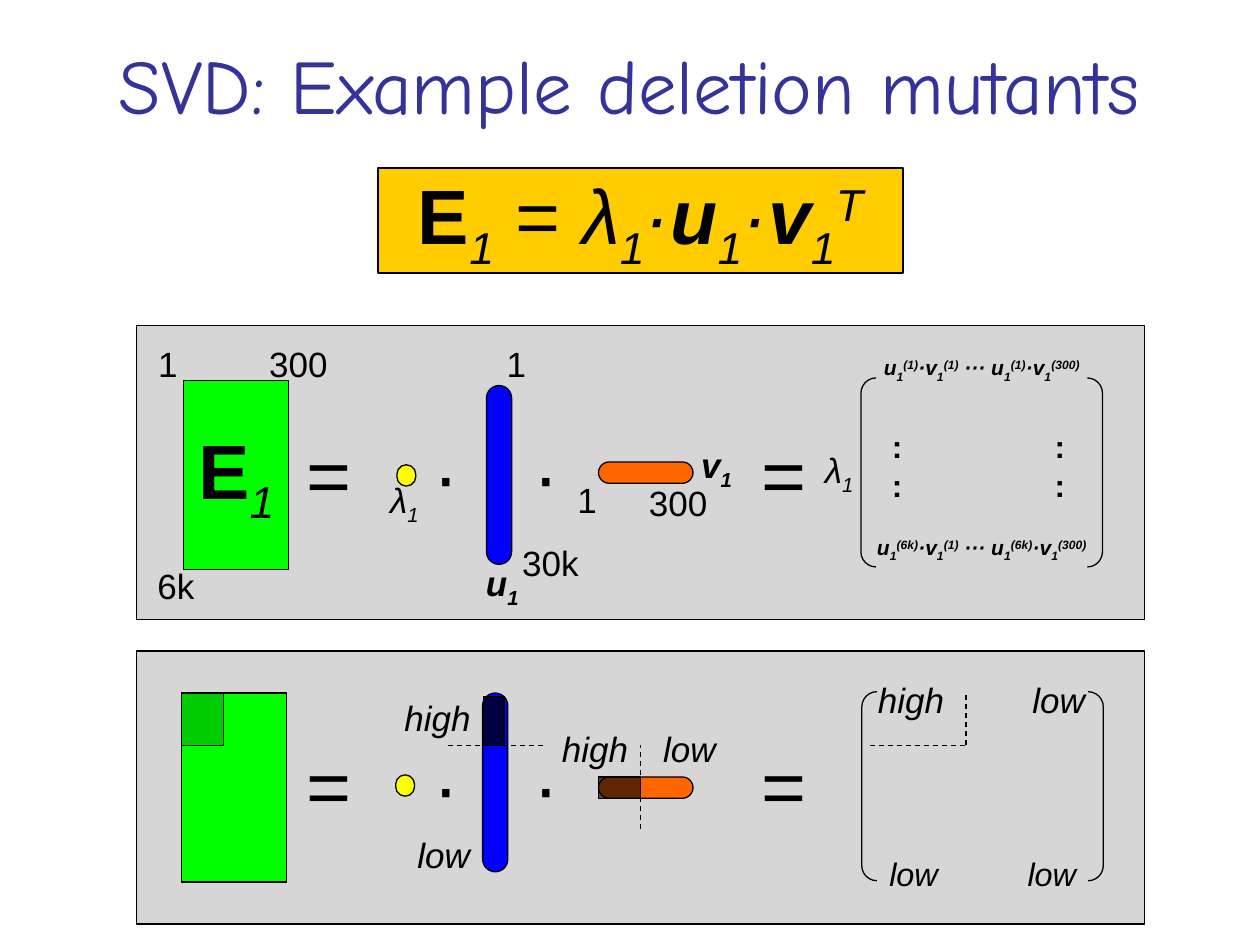
from lxml import etree
from pptx import Presentation, util as u
from pptx.dml.color import RGBColor
from pptx.enum import dml, shapes as sh, text as tx
from pptx.oxml.ns import qn

Pt = u.Pt
INK = {"black": "000000", "title": "333399", "gold": "FFCC00", "gray": "808080",
       "green": "00FF00", "blue": "0000FF", "orange": "FF6600", "yellow": "FFFF00"}
KIND = sh.MSO_SHAPE
BASE = {"_": "-25000", "^": "30000"}


def rgb(name):
    return RGBColor.from_string(INK[name])


class Pen:
    """Style and current slide."""
    face = "Arial"
    line = 0.75

    def __init__(self, slide):
        self.slide = slide

    def letter(self, shape, runs, size, ink="black", face=None):
        """Runs are (text, marks): b bold, i italic, _ below, ^ above."""
        frame = shape.text_frame
        form = {"word_wrap": False, "vertical_anchor": tx.MSO_ANCHOR.MIDDLE}
        for key, val in form.items():
            setattr(frame, key, val)
        para = frame.paragraphs[0]
        para.alignment = tx.PP_ALIGN.CENTER
        for word, marks in runs:
            run = para.add_run()
            run.text = word
            form = {"size": Pt(size), "name": face or self.face,
                    "bold": "b" in marks, "italic": "i" in marks}
            for key, val in form.items():
                setattr(run.font, key, val)
            run.font.color.rgb = rgb(ink)
            for mark in BASE:
                if mark in marks:
                    run.font._element.set("baseline", BASE[mark])

    def label(self, x, y, runs, size=20, wide=60, **form):
        """Text centred on x, y."""
        if isinstance(runs, str):
            runs = [(runs, "")]
        high = size * 1.2 + 8
        box = self.slide.shapes.add_textbox(
            Pt(x - wide / 2), Pt(y - high / 2), Pt(wide), Pt(high))
        self.letter(box, runs, size, **form)

    def shape(self, kind, at, fill=None, alpha=None, adj=None):
        item = self.slide.shapes.add_shape(kind, *map(Pt, at))
        item.shadow.inherit = False
        item.line.color.rgb = rgb("black")
        item.line.width = Pt(self.line)
        if adj is not None:
            item.adjustments[0] = adj
        if fill is None:
            item.fill.background()
        else:
            item.fill.solid()
            item.fill.fore_color.rgb = rgb(fill)
        if alpha:
            tone = item._element.spPr.find(qn("a:solidFill"))[0]
            etree.SubElement(tone, qn("a:alpha")).set("val", str(alpha * 1000))
        return item

    def dash(self, *ends):
        item = self.slide.shapes.add_connector(
            sh.MSO_CONNECTOR.STRAIGHT, *map(Pt, ends))
        form = {"width": Pt(self.line), "dash_style": dml.MSO_LINE.DASH}
        for key, val in form.items():
            setattr(item.line, key, val)
        item.line.color.rgb = rgb("black")
        etree.SubElement(item._element.spPr, qn("a:effectLst"))


def entry(row, col):
    """One product in the matrix."""
    return [("u", "bi"), ("1", "bi_"), (f"({row})", "bi^"),
            ("·v", "bi"), ("1", "bi_"), (f"({col})", "bi^")]


def sub(word, marks):
    return [(word, marks), ("1", marks + "_")]


def main():
    deck = Presentation()
    deck.slide_width, deck.slide_height = Pt(720), Pt(540)
    pen = Pen(deck.slides.add_slide(deck.slide_layouts[6]))

    # Title and formula
    pen.label(360, 48, "SVD: Example deletion mutants", 44, wide=720,
              ink="title", face="Comic Neue")
    gold = pen.shape(KIND.RECTANGLE, (216, 96, 300, 60), "gold")
    matrix = [("E", "b"), ("1", "i_")]
    pen.letter(gold, matrix + [
        (" = ", ""), ("λ", "i"), ("1", "i_"), ("·", "i"), ("u", "bi"),
        ("1", "i_"), ("·", "i"), ("v", "bi"), ("1", "i_"), ("T", "i^")], 44)

    # Panels
    for top, high in ((186, 168), (372, 156)):
        pen.shape(KIND.RECTANGLE, (78, top, 576, high), "gray", 32)

    # Factors: kind, fill, roundness, size, upper and lower corner
    pill = KIND.ROUNDED_RECTANGLE
    parts = (
        (KIND.RECTANGLE, "green", None, (60, 108), (105, 217.4), (103.6, 396)),
        (pill, "yellow", 0.5, (10.8, 12.2), (226.8, 265.6), (226.1, 442.8)),
        (pill, "blue", 0.5, (14.4, 102.2), (278, 220.3), (275.8, 396)),
        (pill, "orange", 0.5, (54, 12.2), (342, 264), (342, 444)),
        (KIND.DOUBLE_BRACKET, None, 0.08, (138, 108), (492, 216), (492.5, 395.3)))
    for kind, fill, adj, size, *spots in parts:
        made = [pen.shape(kind, spot + size, fill, adj=adj) for spot in spots]
        if fill == "green":
            pen.letter(made[0], matrix, 44)

    # Signs
    for y in (270, 448):
        for x, sign in ((188, "="), (255, "·"), (312, "·"), (448, "=")):
            pen.label(x, y, sign, 44)

    # Upper labels
    for x, y, word in (
            (96, 207.5, "1"), (170.5, 207.5, "300"), (100.5, 334.5, "6k"),
            (295, 207.5, "1"), (314.5, 321.5, "30k"),
            (335.5, 285.5, "1"), (387.5, 287, "300"),
            (231, 287, sub("λ", "i")), (479.5, 270, sub("λ", "i")),
            (409.5, 267, sub("v", "bi")), (287, 334.5, sub("u", "bi"))):
        pen.label(x, y, word)

    # Upper matrix
    for y, row in ((211, "1"), (313.7, "6k")):
        runs = entry(row, "1") + [(" ··· ", "bi")] + entry(row, "300")
        pen.label(561, y, runs, 12, wide=138)
    for x in (512.6, 605.7):
        for y in (255, 277):
            pen.label(x, y, [(":", "b")], 18)

    # Lower highlights
    for at, alpha in (((103.6, 396, 24, 30), 20), ((276.5, 398, 11.5, 28), 75),
                      ((342, 444, 24, 12.2), 62)):
        pen.shape(KIND.RECTANGLE, at, "black", alpha)
    for ends in ((256, 426, 312, 426), (366, 474, 366, 426),
                 (497, 426, 552, 426), (552, 426, 552, 396)):
        pen.dash(*ends)

    # Lower labels
    for x, y, word, size in (
            (250, 410, "high", 20), (253.5, 488.5, "low", 20),
            (340, 428, "high", 20), (394, 428, "low", 20),
            (520.6, 399.5, "high", 20), (605, 399.5, "low", 20),
            (522, 499, "low", 18.5), (601, 499, "low", 18.5)):
        pen.label(x, y, [(word, "i")], size)

    deck.save("out.pptx")


if __name__ == "__main__":
    main()
